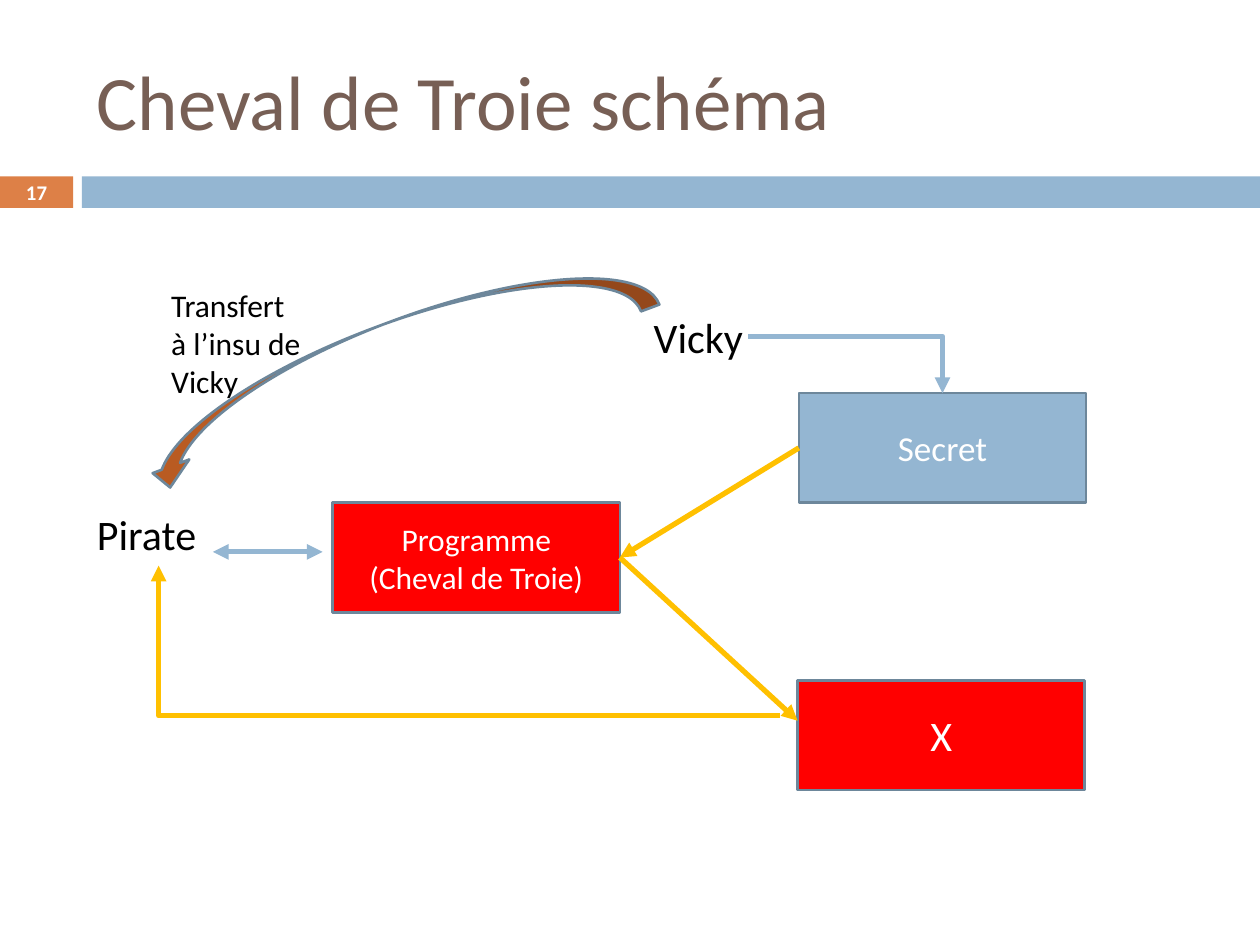
from lxml.etree import SubElement
from pptx import Presentation
from pptx.dml.color import RGBColor
from pptx.enum.shapes import MSO_CONNECTOR as LINK, MSO_SHAPE as SHAPE
from pptx.enum.text import MSO_ANCHOR as ANCHOR, PP_ALIGN as ALIGN
from pptx.oxml.ns import qn
from pptx.util import Inches, Pt

BLUE, RED, YELLOW, OUTLINE = "94B6D2", "FF0000", "FFC000", "6D879B"

deck = Presentation()
deck.slide_width, deck.slide_height = Inches(10), Inches(7.5)
slide = deck.slides.add_slide(deck.slide_layouts[6])
shapes = slide.shapes
color = RGBColor.from_string


def write(holder, lines, size, ink, align=ALIGN.LEFT, anchor=ANCHOR.TOP, bold=False):
    frame = holder.text_frame
    frame.word_wrap = True
    frame.vertical_anchor = anchor
    for i, line in enumerate(lines):
        paragraph = frame.paragraphs[0] if i == 0 else frame.add_paragraph()
        paragraph.alignment = align
        run = paragraph.add_run()
        run.text = line
        run.font.name, run.font.size, run.font.bold = "Calibri", Pt(size), bold
        run.font.color.rgb = color(ink)


def block(preset, place, fill, outline=None):
    shape = shapes.add_shape(preset, *map(Inches, place))
    shape.shadow.inherit = False
    shape.fill.solid()
    shape.fill.fore_color.rgb = color(fill)
    if outline:
        shape.line.color.rgb = color(outline)
        shape.line.width = Pt(1.5)
    else:
        shape.line.fill.background()
    return shape


block(SHAPE.RECTANGLE, (0, 1.4, 0.58, 0.25), "DD8047")
block(SHAPE.RECTANGLE, (0.65, 1.4, 9.35, 0.25), BLUE)

title = shapes.add_textbox(Inches(0.67), Inches(0.25), Inches(8.92), Inches(1.08))
write(title, ["Cheval de Troie schéma"], 44, "775F55", anchor=ANCHOR.MIDDLE)

number = shapes.add_textbox(Inches(0), Inches(1.39), Inches(0.58), Inches(0.27))
margins = number.text_frame
margins.margin_left = margins.margin_right = margins.margin_top = margins.margin_bottom = 0
write(number, ["17"], 11.9, "FFFFFF", ALIGN.CENTER, ANCHOR.MIDDLE, True)

boxes = {}
for key, left, top, fill, size, lines in [
    ("secret", 6.34, 3.12, BLUE, 20, ["Secret"]),
    ("program", 2.64, 3.99, RED, 18, ["Programme", "(Cheval de Troie)"]),
    ("x", 6.33, 5.4, RED, 24, ["X"]),
]:
    boxes[key] = block(SHAPE.RECTANGLE, (left, top, 2.28, 0.87), fill, OUTLINE)
    write(boxes[key], lines, size, "FFFFFF", ALIGN.CENTER, ANCHOR.MIDDLE)

for kind, start, end, ink, source, target, ends in [
    (LINK.ELBOW, (5.94, 2.67), (7.48, 3.12), BLUE, None, ("secret", 0), ["tailEnd"]),
    (LINK.STRAIGHT, (1.69, 4.38), (2.56, 4.38), BLUE, None, None, ["headEnd", "tailEnd"]),
    (LINK.STRAIGHT, (6.34, 3.55), (4.92, 4.42), YELLOW, ("secret", 1), ("program", 3), ["tailEnd"]),
    (LINK.STRAIGHT, (4.92, 4.42), (6.33, 5.72), YELLOW, ("program", 3), None, ["tailEnd"]),
    (LINK.ELBOW, (6.19, 5.68), (1.26, 4.49), YELLOW, None, None, ["tailEnd"]),
]:
    link = shapes.add_connector(kind, *map(Inches, start + end))
    if source:
        link.begin_connect(boxes[source[0]], source[1])
    if target:
        link.end_connect(boxes[target[0]], target[1])
    link.line.color.rgb = color(ink)
    link.line.width = Pt(3)
    properties = link._element.spPr
    if kind == LINK.ELBOW:
        properties.find(qn("a:prstGeom")).set("prst", "bentConnector2")
    for tip in ends:
        SubElement(properties.find(qn("a:ln")), qn("a:" + tip), type="triangle")
    SubElement(properties, qn("a:effectLst"))

transfer = block(SHAPE.CURVED_RIGHT_ARROW, (2.8, 0.73, 0.62, 4.3), "B95B22", OUTLINE)
transfer.rotation = 69.5

for place, size, lines in [
    ((5.09, 2.42, 1.1, 0.5), 24, ["Vicky"]),
    ((0.67, 3.99, 1.18, 0.5), 24, ["Pirate"]),
    ((1.26, 2.22, 1.42, 1.01), 18, ["Transfert", "à l’insu de Vicky"]),
]:
    label = shapes.add_textbox(*map(Inches, place))
    write(label, lines, size, "000000")

deck.save("out.pptx")
